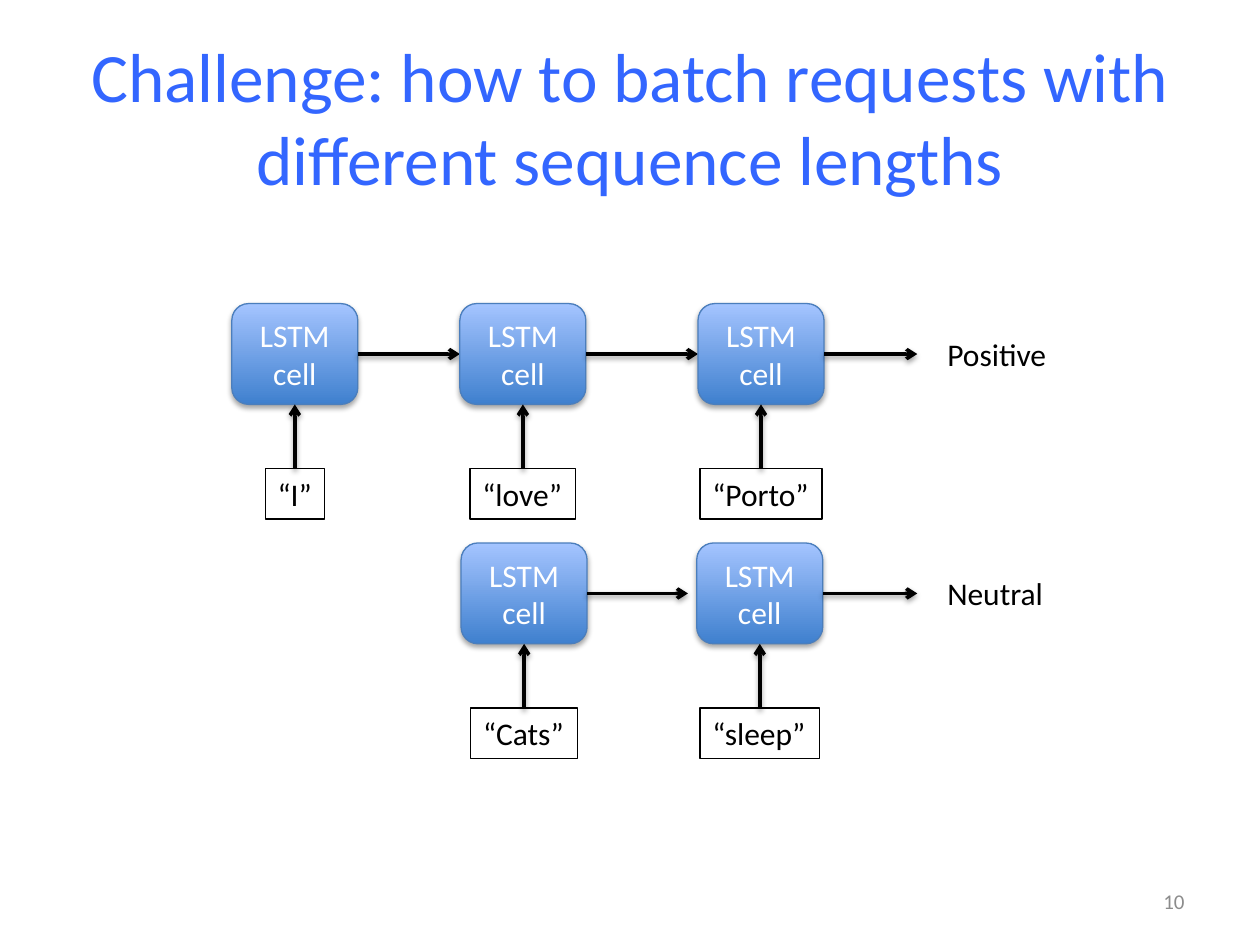
from lxml import etree
from pptx import Presentation
from pptx.dml.color import RGBColor
from pptx.enum.shapes import MSO_CONNECTOR, MSO_SHAPE
from pptx.enum.text import MSO_ANCHOR, MSO_AUTO_SIZE, PP_ALIGN
from pptx.oxml.ns import qn
from pptx.util import Inches, Pt

STRAIGHT = MSO_CONNECTOR.STRAIGHT
ROUNDED = MSO_SHAPE.ROUNDED_RECTANGLE
MIDDLE, TOP = MSO_ANCHOR.MIDDLE, MSO_ANCHOR.TOP
LEFT, CENTER, RIGHT = PP_ALIGN.LEFT, PP_ALIGN.CENTER, PP_ALIGN.RIGHT
FIT_SHAPE = MSO_AUTO_SIZE.SHAPE_TO_FIT_TEXT

CELL_WIDTH, CELL_HEIGHT = 1, 0.8
WORD_DROP, LABEL_HEIGHT = 1.31, 0.4


def color(value):
    """Turn a hex string into a colour."""
    return RGBColor.from_string(value)


def write(shape, lines, size, ink, align=LEFT, anchor=TOP):
    """Fill a shape with one styled paragraph per line."""
    frame = shape.text_frame
    frame.text = "\n".join(lines)
    frame.word_wrap = True
    frame.vertical_anchor = anchor
    for para in frame.paragraphs:
        para.alignment = align
        para.font.name = "Calibri"
        para.font.size = Pt(size)
        para.font.color.rgb = color(ink)


def add_text(shapes, box, text, size, ink, align, anchor):
    """Place a wrapping line of text in the given box."""
    label = shapes.add_textbox(*map(Inches, box))
    write(label, [text], size, ink, align, anchor)


def add_label(shapes, left, top, width, text, outlined=False):
    """Place a short label that fits its text, with an optional outline."""
    label = shapes.add_textbox(*map(Inches, (left, top, width, LABEL_HEIGHT)))
    write(label, [text], 18, "000000")
    label.text_frame.word_wrap = False
    label.text_frame.auto_size = FIT_SHAPE
    if outlined:
        label.line.color.rgb = color("000000")
        label.line.width = Pt(0.75)


def add_shadow(effects, distance, opacity):
    """Put a soft downward shadow in an effect list."""
    shadow = etree.SubElement(
        effects, qn("a:outerShdw"), blurRad=str(Pt(3.1)), dist=str(Pt(distance)),
        dir="5400000", rotWithShape="0")
    ink = etree.SubElement(shadow, qn("a:srgbClr"), val="000000")
    etree.SubElement(ink, qn("a:alpha"), val=str(opacity * 1000))


def add_cell(shapes, left, top):
    """Draw one LSTM cell."""
    cell = shapes.add_shape(
        ROUNDED, *map(Inches, (left, top, CELL_WIDTH, CELL_HEIGHT)))
    cell.fill.gradient()
    cell.fill.gradient_angle = 90
    for stop, shade in zip(cell.fill.gradient_stops, ("3F80CE", "A4C4FF")):
        stop.color.rgb = color(shade)
    cell.line.color.rgb = color("4B7EBC")
    cell.line.width = Pt(0.75)
    cell.shadow.inherit = False
    add_shadow(cell._element.spPr.find(qn("a:effectLst")), 1.8, 35)
    write(cell, ["LSTM", "cell"], 18, "FFFFFF", CENTER, MIDDLE)


def add_arrow(shapes, start, end):
    """Draw a black arrow between two points."""
    arrow = shapes.add_connector(STRAIGHT, *map(Inches, start + end))
    arrow.line.color.rgb = color("000000")
    arrow.line.width = Pt(2)
    properties = arrow._element.spPr
    etree.SubElement(properties.find(qn("a:ln")), qn("a:tailEnd"), type="arrow")
    add_shadow(etree.SubElement(properties, qn("a:effectLst")), 1.6, 38)


def add_sequence(page, left, top, width, steps, verdict, gap=0):
    """Draw a chain of cells fed by words, ending in a verdict at the right."""
    shapes = page.shapes.add_group_shape().shapes
    middle = top + CELL_HEIGHT / 2
    starts = [left + offset for offset, *_ in steps]
    targets = [start - gap for start in starts[1:]] + [left + width]
    for start, target, (_, word, word_width) in zip(starts, targets, steps):
        center = start + CELL_WIDTH / 2
        add_cell(shapes, start, top)
        add_label(shapes, center - word_width / 2, top + WORD_DROP,
                  word_width, word, outlined=True)
        add_arrow(shapes, (start + CELL_WIDTH, middle), (target, middle))
        add_arrow(shapes, (center, top + WORD_DROP), (center, top + CELL_HEIGHT))
    add_label(shapes, left + width + 0.14, middle - LABEL_HEIGHT / 2, 1, verdict)


def main():
    """Build and save the slide."""
    deck = Presentation()
    deck.slide_width, deck.slide_height = Inches(10), Inches(7.5)
    page = deck.slides.add_slide(deck.slide_layouts[6])
    add_text(page.shapes, (0.5, 0.3, 9, 1.25),
             "Challenge: how to batch requests with different sequence lengths",
             39.6, "3366FF", CENTER, MIDDLE)
    add_sequence(page, 1.84, 2.41, 5.44,
                 [(0, "“I”", 0.47), (1.81, "“love”", 0.84), (3.7, "“Porto”", 0.97)],
                 "Positive")
    add_sequence(page, 3.66, 4.31, 3.62,
                 [(0, "“Cats”", 0.85), (1.87, "“sleep”", 0.95)],
                 "Neutral", gap=0.07)
    add_text(page.shapes, (7.17, 6.95, 2.33, 0.4), "10", 12, "8C8C8C", RIGHT, MIDDLE)
    deck.save("out.pptx")


if __name__ == "__main__":
    main()
